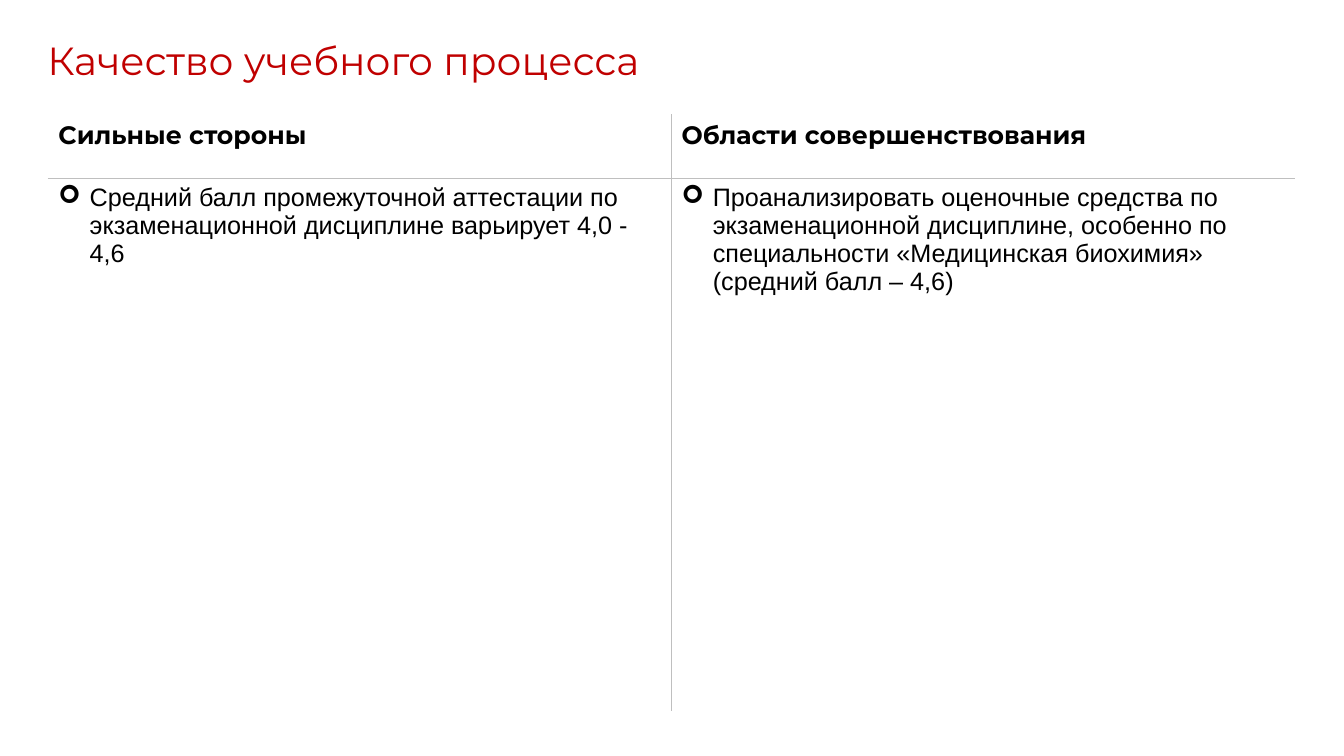
from dataclasses import dataclass

from lxml.etree import SubElement
from pptx import Presentation
from pptx.dml.color import RGBColor as RGB
from pptx.enum.text import MSO_ANCHOR as Anchor, PP_ALIGN as Align
from pptx.oxml.ns import qn
from pptx.util import Inches, Pt


@dataclass(frozen=True)
class Theme:
    red: str = "C00000"
    ink: str = "000000"
    rule: str = "BFBFBF"
    paper: str = "FFFFFF"
    head_font: str = "Montserrat"
    body_font: str = "Arial"
    title_size: int = 28
    text_size: int = 18


THEME = Theme()
HEADS = ["Сильные стороны", "Области совершенствования"]
POINTS = [
    "Средний балл промежуточной аттестации по экзаменационной дисциплине "
    "варьирует 4,0 - 4,6",
    "Проанализировать оценочные средства по экзаменационной дисциплине, "
    "особенно по специальности «Медицинская биохимия» (средний балл – 4,6)",
]


def style(para, font, size, color, bold=False):
    for run in para.runs:
        run.font.name = font
        run.font.size = Pt(size)
        run.font.bold = bold
        run.font.color.rgb = RGB.from_string(color)


def add_title(slide, text):
    title = slide.shapes.title
    title.left, title.top = Inches(0.37), Inches(0.31)
    title.width, title.height = Inches(6.62), Inches(0.57)
    frame = title.text_frame
    frame.text = text
    frame.word_wrap = False
    frame.vertical_anchor = Anchor.TOP
    para = frame.paragraphs[0]
    para.alignment = Align.LEFT
    para.line_spacing = 1.0
    para.space_before = Pt(0)
    style(para, THEME.head_font, THEME.title_size, THEME.red)


def add_bullet(para, indent=Inches(0.31)):
    props = para._p.get_or_add_pPr()
    props.set("marL", str(indent))
    props.set("indent", str(-indent))
    SubElement(props, qn("a:buFont"), typeface="Wingdings")
    SubElement(props, qn("a:buChar"), char="➢")


def set_borders(cell, row, col):
    """Draw grey rules between cells and white ones on the outside."""
    inner = {"L": col == 1, "R": col == 0, "T": row == 1, "B": row == 0}
    props = cell._tc.get_or_add_tcPr()
    for side, shown in inner.items():
        line = SubElement(props, qn(f"a:ln{side}"), w=str(Pt(1)))
        fill = SubElement(line, qn("a:solidFill"))
        SubElement(fill, qn("a:srgbClr"), val=THEME.rule if shown else THEME.paper)


def fill_cell(cell, text, row, col):
    cell.text_frame.text = text
    para = cell.text_frame.paragraphs[0]
    is_head = row == 0
    font = THEME.head_font if is_head else THEME.body_font
    style(para, font, THEME.text_size, THEME.ink, bold=is_head)
    if not is_head:
        add_bullet(para)
    set_borders(cell, row, col)
    cell.fill.background()


def add_grid(slide, rows):
    frame = slide.shapes.add_table(
        2, 2, Inches(0.48), Inches(1.14), Inches(12.36), Inches(5.92))
    table = frame.table
    table.first_row = table.horz_banding = False
    for row, height in zip(table.rows, (0.63, 5.29)):
        row.height = Inches(height)
    for r, texts in enumerate(rows):
        for c, text in enumerate(texts):
            fill_cell(table.cell(r, c), text, r, c)


def main():
    deck = Presentation()
    deck.slide_width, deck.slide_height = Inches(13.33), Inches(7.5)
    slide = deck.slides.add_slide(deck.slide_layouts.get_by_name("Title Only"))
    add_title(slide, "Качество учебного процесса")
    add_grid(slide, [HEADS, POINTS])
    deck.save("out.pptx")


if __name__ == "__main__":
    main()
